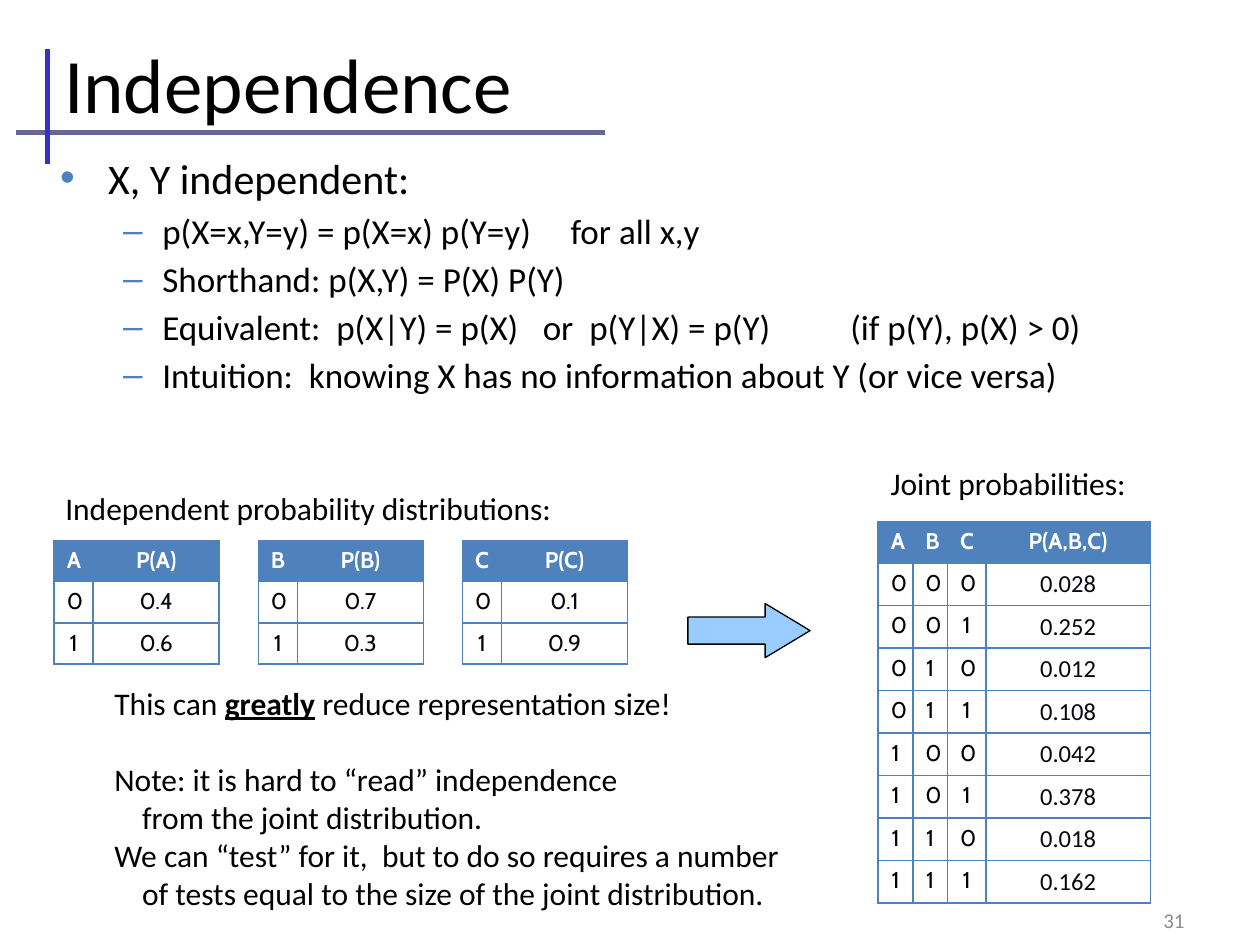
from itertools import product
from lxml.etree import SubElement
from pptx import Presentation
from pptx.dml.color import RGBColor as RGB
from pptx.enum.shapes import MSO_CONNECTOR as LINE, MSO_SHAPE as SHAPE
from pptx.enum.text import MSO_ANCHOR as ANCHOR, MSO_AUTO_SIZE as FIT, PP_ALIGN as ALIGN
from pptx.oxml.ns import qn
from pptx.util import Inches, Pt

HUES = dict(ink="000000", white="FFFFFF", blue="4F81BD", bar="666699",
            post="3333CC", sky="99CCFF", gray="8C8C8C", dark="07080F")
COLS, ROWS = 100, 75
BODY = dict(name="Calibri", size=Pt(18), bold=False)
CELL = dict(name="Cabin", size=Pt(13), bold=False)
HEAD = dict(CELL, bold=True)


class Deck:
    def __init__(self):
        self.prs = Presentation()
        self.prs.slide_width, self.prs.slide_height = Inches(10), Inches(7.5)
        self.slide = self.prs.slides.add_slide(self.prs.slide_layouts[5])
        self.shapes = self.slide.shapes

    def x(self, col):
        return round(self.prs.slide_width * col / COLS)

    def y(self, row):
        return round(self.prs.slide_height * row / ROWS)

    def box(self, col, row, wide, high):
        return self.x(col), self.y(row), self.x(wide), self.y(high)

    def hue(self, name):
        return RGB.from_string(HUES[name])

    def paint(self, fill, name):
        fill.solid()
        fill.fore_color.rgb = self.hue(name)

    def font(self, font, fmt, hue="ink"):
        for key, val in fmt.items():
            setattr(font, key, val)
        font.color.rgb = self.hue(hue)

    def title(self, text, *spot):
        head = self.shapes.title
        head.left, head.top, head.width, head.height = self.box(*spot)
        frame = head.text_frame
        frame.text, frame.vertical_anchor = text, ANCHOR.MIDDLE
        para = frame.paragraphs[0]
        para.alignment = ALIGN.LEFT
        self.font(para.runs[0].font, dict(BODY, size=Pt(44)))

    def line(self, start, end, hue):
        rule = self.shapes.add_connector(LINE.STRAIGHT, self.x(start[0]), self.y(start[1]),
                                         self.x(end[0]), self.y(end[1]))
        rule.line.color.rgb, rule.line.width = self.hue(hue), Pt(3)
        SubElement(rule._element.spPr, qn("a:effectLst"))

    def arrow(self, *spot):
        shape = self.shapes.add_shape(SHAPE.RIGHT_ARROW, *self.box(*spot))
        shape.adjustments[1] = 0.83
        shape.shadow.inherit = False
        self.paint(shape.fill, "sky")
        shape.line.color.rgb, shape.line.width = self.hue("ink"), Pt(0.75)

    def frame(self, spot, wrap=False):
        frame = self.shapes.add_textbox(*self.box(*spot)).text_frame
        frame.word_wrap = wrap
        frame.auto_size = FIT.NONE if wrap else FIT.SHAPE_TO_FIT_TEXT
        return frame

    def para(self, frame, parts, fmt=BODY, hue="ink", gap=0, pad=0):
        first = not frame.text
        para = frame.paragraphs[0] if first else frame.add_paragraph()
        if not first:
            para.space_before = Pt(gap)
        if pad:
            para._p.get_or_add_pPr().set("marL", str(Inches(pad)))
        for text, more in parts:
            run = para.add_run()
            run.text = text
            self.font(run.font, {**fmt, **more}, hue)
        return para

    def bullet(self, frame, text, mark, size, left, hang, stops=()):
        para = self.para(frame, [(text, {})], dict(BODY, size=Pt(size)), gap=3.6, pad=left)
        prop = para._p.get_or_add_pPr()
        prop.set("indent", str(-Inches(hang)))
        tint = SubElement(prop, qn("a:buClr"))
        SubElement(tint, qn("a:srgbClr"), val=HUES["blue"])
        SubElement(prop, qn("a:buFont"), typeface="Arial")
        SubElement(prop, qn("a:buChar"), char=mark)
        if stops:
            tabs = SubElement(prop, qn("a:tabLst"))
            for stop in stops:
                SubElement(tabs, qn("a:tab"), pos=str(Inches(stop)), algn="l")

    def edge(self, cell):
        prop = cell._tc.get_or_add_tcPr()
        for place, side in enumerate(("lnL", "lnR", "lnT", "lnB")):
            line = prop.makeelement(qn(f"a:{side}"), {"w": str(Pt(1))})
            fill = SubElement(line, qn("a:solidFill"))
            SubElement(fill, qn("a:srgbClr"), val=HUES["blue"])
            prop.insert(place, line)

    def table(self, col, row, wides, high, data, last=CELL):
        spot = self.box(col, row, sum(wides), high * len(data))
        grid = self.shapes.add_table(len(data), len(wides), *spot).table
        grid.first_row = grid.horz_banding = False
        for slot, wide in zip(grid.columns, wides):
            slot.width = self.x(wide)
        for i, line in enumerate(data):
            grid.rows[i].height = self.y(high)
            for j, text in enumerate(line):
                cell, end = grid.cell(i, j), j == len(wides) - 1
                cell.text = text
                self.paint(cell.fill, "white" if i else "blue")
                self.edge(cell)
                para = cell.text_frame.paragraphs[0]
                para.alignment = ALIGN.CENTER
                fmt = HEAD if i == 0 else last if end else CELL
                hue = "white" if i == 0 else "dark" if end else "ink"
                self.font(para.runs[0].font, fmt, hue)


def main():
    deck = Deck()
    deck.line((1.3, 10.5), (48, 10.5), "bar")
    deck.line((3.8, 13), (3.8, 3.9), "post")
    deck.title("Independence", 4.1, 1, 89.2, 11.2)

    body = deck.frame((3.8, 11.6, 95, 58.3), wrap=True)
    deck.bullet(body, "X, Y independent:", "•", 24, 0.38, 0.38)
    for text, stops in (
            ("p(X=x,Y=y) = p(X=x) p(Y=y)\tfor all x,y", [4.05]),
            ("Shorthand: p(X,Y) = P(X) P(Y)", []),
            ("Equivalent:  p(X|Y) = p(X)\tor  p(Y|X) = p(Y)\t(if p(Y), p(X) > 0)", [3.83, 6.27]),
            ("Intuition:  knowing X has no information about Y (or vice versa)", [])):
        deck.bullet(body, text, "–", 20, 0.81, 0.31, stops)

    odds = dict(A=(0.4, 0.6), B=(0.7, 0.3), C=(0.1, 0.9))
    for i, (name, pair) in enumerate(odds.items()):
        data = [(name, f"P({name})")] + [(str(k), str(p)) for k, p in enumerate(pair)]
        deck.table(4.3 + 16.2 * i, 42.9, (3.1, 10), 3.27, data)

    joint = [(*odds, "P(A,B,C)")]
    for a, b, c in product((0, 1), repeat=3):
        odd = odds["A"][a] * odds["B"][b] * odds["C"][c]
        joint.append((str(a), str(b), str(c), f"{odd:.3f}"))
    deck.table(69.7, 41.4, (2.75, 2.75, 3.05, 13.05), 3.3, joint, dict(BODY, size=Pt(14)))

    deck.arrow(54.6, 47.9, 9.7, 4.3)
    for text, spot in (("Independent probability distributions:", (4.2, 38.3, 41.1, 4)),
                       ("Joint probabilities:", (69.7, 36.3, 20.9, 4))):
        deck.para(deck.frame(spot), [(text, {})])

    note = deck.frame((8.1, 53.8, 55.4, 19.2))
    deck.para(note, [("This can ", {}), ("greatly", dict(bold=True, underline=True)),
                     (" reduce representation size!", {})])
    for text, gap, pad in (
            ("Note: it is hard to “read” independence", 22, 0),
            ("from the joint distribution.", 0, 0.22),
            ("We can “test” for it,  but to do so requires a number", 0, 0),
            ("of tests equal to the size of the joint distribution.", 0, 0.22)):
        deck.para(note, [(text, {})], gap=gap, pad=pad)

    page = deck.frame((71.7, 71, 23.3, 4), wrap=True)
    page.vertical_anchor = ANCHOR.MIDDLE
    deck.para(page, [("31", {})], dict(BODY, size=Pt(12)), "gray").alignment = ALIGN.RIGHT
    deck.prs.save("out.pptx")


if __name__ == "__main__":
    main()
